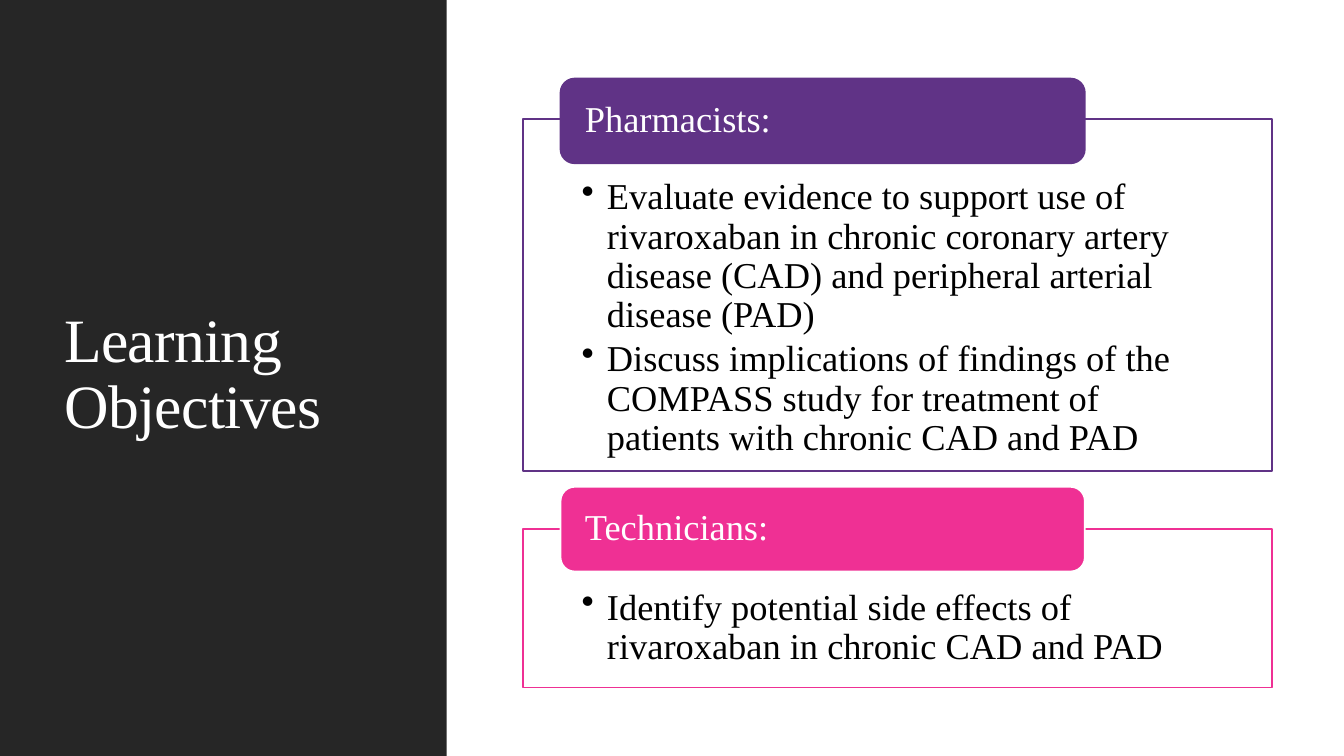
"""Build the learning objectives slide."""
from dataclasses import dataclass

from lxml.etree import SubElement
from pptx import Presentation
from pptx.dml.color import RGBColor
from pptx.enum.shapes import MSO_SHAPE as Kind
from pptx.enum.text import MSO_ANCHOR as Anchor, PP_ALIGN as Align
from pptx.oxml.ns import qn
from pptx.shapes.autoshape import Shape
from pptx.slide import Slide
from pptx.text.text import TextFrame
from pptx.util import Emu, Inches, Pt

FONT = "Times New Roman"
DARK, WHITE, BLACK = "262626", "FFFFFF", "000000"
PURPLE, PINK = "603386", "EF3094"
FRAME_LEFT, FRAME_WIDTH = 5.19, 7.43
TAB_LEFT, TAB_WIDTH, TAB_HEIGHT = 5.56, 5.2, 0.84


@dataclass
class Section:
    heading: str
    objectives: list[str]
    color: str
    tab_line: str
    tab_top: float
    frame_top: float
    frame_height: float


SECTIONS = [
    Section("Pharmacists:", [
        "Evaluate evidence to support use of rivaroxaban in chronic coronary "
        "artery disease (CAD) and peripheral arterial disease (PAD)",
        "Discuss implications of findings of the COMPASS study for treatment "
        "of patients with chronic CAD and PAD",
    ], PURPLE, PURPLE, 0.78, 1.18, 3.49),
    Section("Technicians:", [
        "Identify potential side effects of rivaroxaban in chronic CAD and PAD",
    ], PINK, WHITE, 4.83, 5.25, 1.57),
]


def rgb(value: str) -> RGBColor:
    return RGBColor.from_string(value)


def apply_format(target: object, values: dict) -> None:
    for name, value in values.items():
        setattr(target, name, value)


def add_box(page: Slide, kind: Kind, area: tuple, fill: str | None, line: str | None) -> Shape:
    box = page.shapes.add_shape(kind, *map(Inches, area))
    box.shadow.inherit = False
    if fill:
        box.fill.solid()
        box.fill.fore_color.rgb = rgb(fill)
    else:
        box.fill.background()
    if line:
        box.line.color.rgb = rgb(line)
        box.line.width = Pt(1.25)
    else:
        box.line.fill.background()
    return box


def write(frame: TextFrame, lines: list[str], size: float, color: str, anchor: Anchor,
          insets: tuple, bullets: bool = False, tracking: int = 0) -> None:
    sides = ("margin_left", "margin_top", "margin_right", "margin_bottom")
    apply_format(frame, dict(zip(sides, map(Inches, insets))))
    apply_format(frame, {"word_wrap": True, "vertical_anchor": anchor})
    for index, line in enumerate(lines):
        para = frame.add_paragraph() if index else frame.paragraphs[0]
        apply_format(para, {"alignment": Align.LEFT, "line_spacing": 0.9})
        span = para.add_run()
        span.text = line
        apply_format(span.font, {"name": FONT, "size": Pt(size)})
        span.font.color.rgb = rgb(color)
        if tracking:
            span.font._element.set("spc", str(tracking))
        if bullets:
            para.space_after = Pt(3.5)
            add_bullet(para._p.get_or_add_pPr(), Inches(0.25))


def add_bullet(properties: object, indent: Emu) -> None:
    properties.set("marL", str(indent))
    properties.set("indent", str(-indent))
    SubElement(properties, qn("a:buChar")).set("char", "•")


def add_section(page: Slide, section: Section) -> None:
    frame_area = (FRAME_LEFT, section.frame_top, FRAME_WIDTH, section.frame_height)
    box = add_box(page, Kind.RECTANGLE, frame_area, None, section.color)
    write(box.text_frame, section.objectives, 26, BLACK, Anchor.TOP,
          (0.58, 0.59, 0.58, 0.2), bullets=True)
    tab_area = (TAB_LEFT, section.tab_top, TAB_WIDTH, TAB_HEIGHT)
    tab = add_box(page, Kind.ROUNDED_RECTANGLE, tab_area, section.color, section.tab_line)
    write(tab.text_frame, [section.heading], 26, WHITE, Anchor.MIDDLE, (0.2, 0, 0.2, 0))


def main() -> None:
    deck = Presentation()
    apply_format(deck, {"slide_width": Inches(13.33), "slide_height": Inches(7.5)})
    page = deck.slides.add_slide(deck.slide_layouts[6])
    add_box(page, Kind.RECTANGLE, (0, 0, 4.43, 7.5), DARK, None)
    title = page.shapes.add_textbox(*map(Inches, (0.54, 0.57, 3.37, 6.31)))
    write(title.text_frame, ["Learning Objectives"], 44, WHITE, Anchor.MIDDLE,
          (0.1, 0.05, 0.1, 0.05), tracking=-50)
    for section in SECTIONS:
        add_section(page, section)
    deck.save("out.pptx")


if __name__ == "__main__":
    main()
